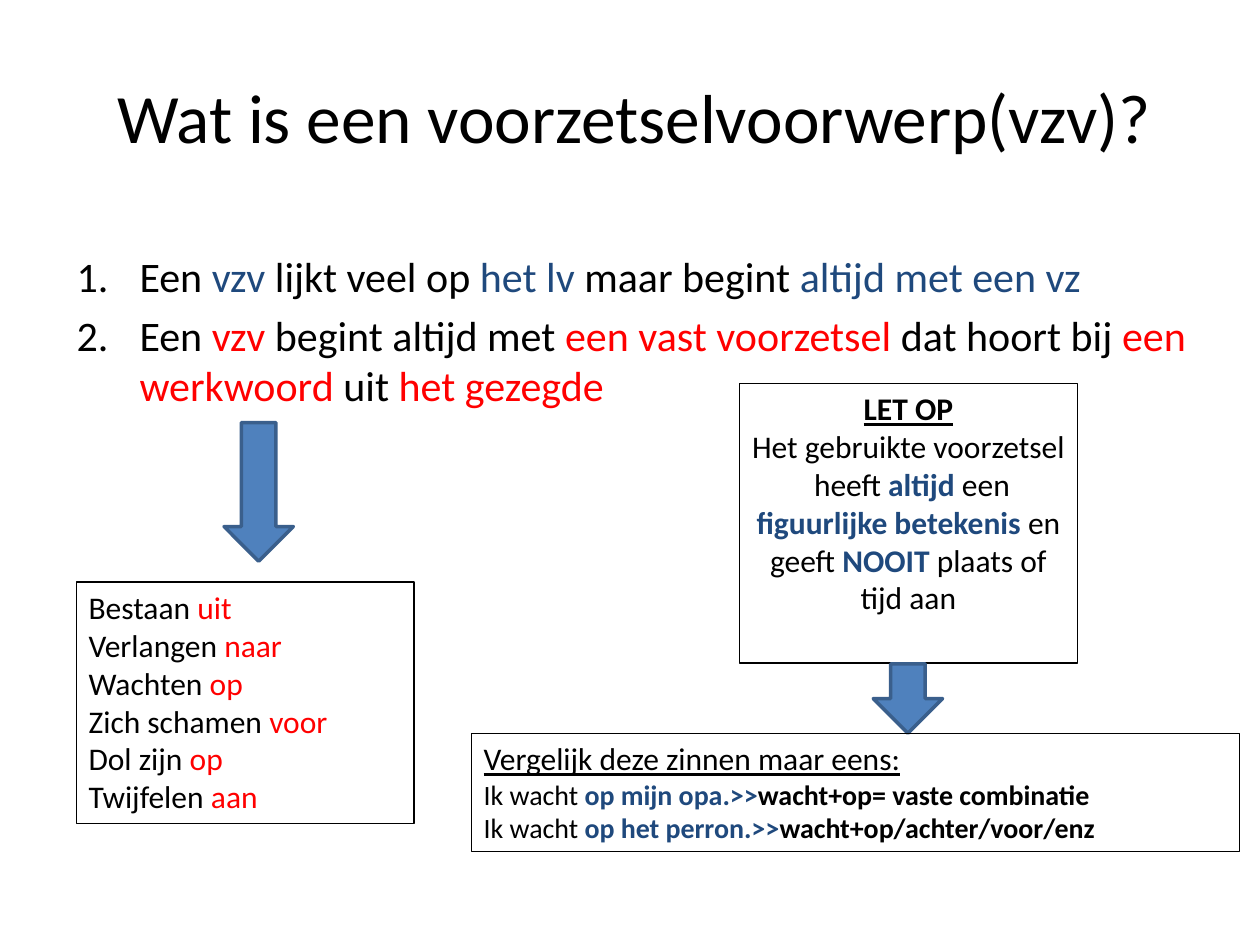
from lxml import etree
from pptx import Presentation
from pptx.dml.color import RGBColor
from pptx.enum.shapes import MSO_SHAPE
from pptx.enum.text import MSO_ANCHOR, PP_ALIGN
from pptx.oxml.ns import qn
from pptx.util import Pt

DOWN_ARROW = MSO_SHAPE.DOWN_ARROW
TOP, MIDDLE = MSO_ANCHOR.TOP, MSO_ANCHOR.MIDDLE
LEFT, CENTER = PP_ALIGN.LEFT, PP_ALIGN.CENTER
BLACK, BLUE, RED = "000000", "1F497D", "FF0000"


def color(value):
    return RGBColor.from_string(value)


class Slide:
    font = "Calibri"
    arrow_fill = "4F81BD"
    arrow_line = "3A5F8C"

    def __init__(self, prs):
        self.s = prs.slides.add_slide(prs.slide_layouts[6])

    def run(self, p, size, text, ink=BLACK, bold=False, underline=False):
        r = p.add_run()
        r.text = text
        f = r.font
        f.name, f.size, f.bold, f.underline = self.font, Pt(size), bold, underline
        f.color.rgb = color(ink)

    def text(self, box, paragraphs, sizes, align=LEFT, anchor=TOP):
        sp = self.s.shapes.add_textbox(*map(Pt, box))
        tf = sp.text_frame
        tf.word_wrap = True
        tf.vertical_anchor = anchor
        for i, (runs, size) in enumerate(zip(paragraphs, sizes)):
            p = tf.add_paragraph() if i else tf.paragraphs[0]
            p.alignment = align
            for parts in runs:
                self.run(p, size, *parts)
        return sp

    def numbered(self, box, paragraphs, size, indent):
        sp = self.text(box, paragraphs, [size] * len(paragraphs))
        for p in sp.text_frame.paragraphs:
            p.space_before = Pt(size * 0.2)
            pPr = p._p.get_or_add_pPr()
            pPr.set("marL", str(Pt(indent)))
            pPr.set("indent", str(-Pt(indent)))
            etree.SubElement(pPr, qn("a:buAutoNum"), type="arabicPeriod")

    def framed(self, box, paragraphs, sizes, align=LEFT):
        sp = self.text(box, paragraphs, sizes, align)
        sp.line.color.rgb = color(BLACK)
        sp.line.width = Pt(0.75)

    def arrow(self, box):
        sp = self.s.shapes.add_shape(DOWN_ARROW, *map(Pt, box))
        sp.shadow.inherit = False
        sp.fill.solid()
        sp.fill.fore_color.rgb = color(self.arrow_fill)
        sp.line.color.rgb = color(self.arrow_line)
        sp.line.width = Pt(2)


def main():
    prs = Presentation()
    prs.slide_width, prs.slide_height = Pt(720), Pt(540)
    slide = Slide(prs)

    slide.text((36, 12.2, 653, 108), [[("Wat is een voorzetselvoorwerp(vzv)?",)]],
               [39.6], CENTER, MIDDLE)

    rules = [
        [("Een ",), ("vzv", BLUE), (" lijkt veel op ",), ("het lv ", BLUE),
         ("maar begint ",), ("altijd met een vz", BLUE)],
        [("Een ",), ("vzv", RED), (" begint altijd met ",),
         ("een vast voorzetsel ", RED), ("dat hoort bij ",),
         ("een werkwoord ", RED), ("uit ",), ("het gezegde", RED)],
    ]
    slide.numbered((36.7, 139.7, 657.4, 400.3), rules, 24, 36)

    slide.arrow((128, 241.5, 39.6, 79.2))
    verbs = [("Bestaan", "uit"), ("Verlangen", "naar"), ("Wachten", "op"),
             ("Zich schamen", "voor"), ("Dol zijn", "op"), ("Twijfelen", "aan")]
    slide.framed((43.5, 332.6, 193, 138.2),
                 [[(verb + " ",), (prep, RED)] for verb, prep in verbs],
                 [18] * len(verbs))

    warning = [
        [("LET OP", BLACK, True, True)],
        [("Het gebruikte voorzetsel  heeft ",), ("altijd", BLUE, True),
         (" een ",), ("figuurlijke betekenis ", BLUE, True),
         ("en geeft ",), ("NOOIT ", BLUE, True), ("plaats of tijd aan",)],
    ]
    slide.framed((422.6, 219, 193, 160), warning, [18, 18], CENTER)

    slide.arrow((499, 379.4, 39.6, 39.6))
    examples = [("op mijn opa.>>", "wacht+op= vaste combinatie"),
                ("op het perron.>>", "wacht+op/achter/voor/enz")]
    comparison = [[("Vergelijk deze zinnen maar eens:", BLACK, False, True)]]
    comparison += [[("Ik wacht ",), (phrase, BLUE, True), (note, BLACK, True)]
                   for phrase, note in examples]
    slide.framed((269.3, 419, 439.2, 67.7), comparison, [18, 16, 16])

    prs.save("out.pptx")


if __name__ == "__main__":
    main()
